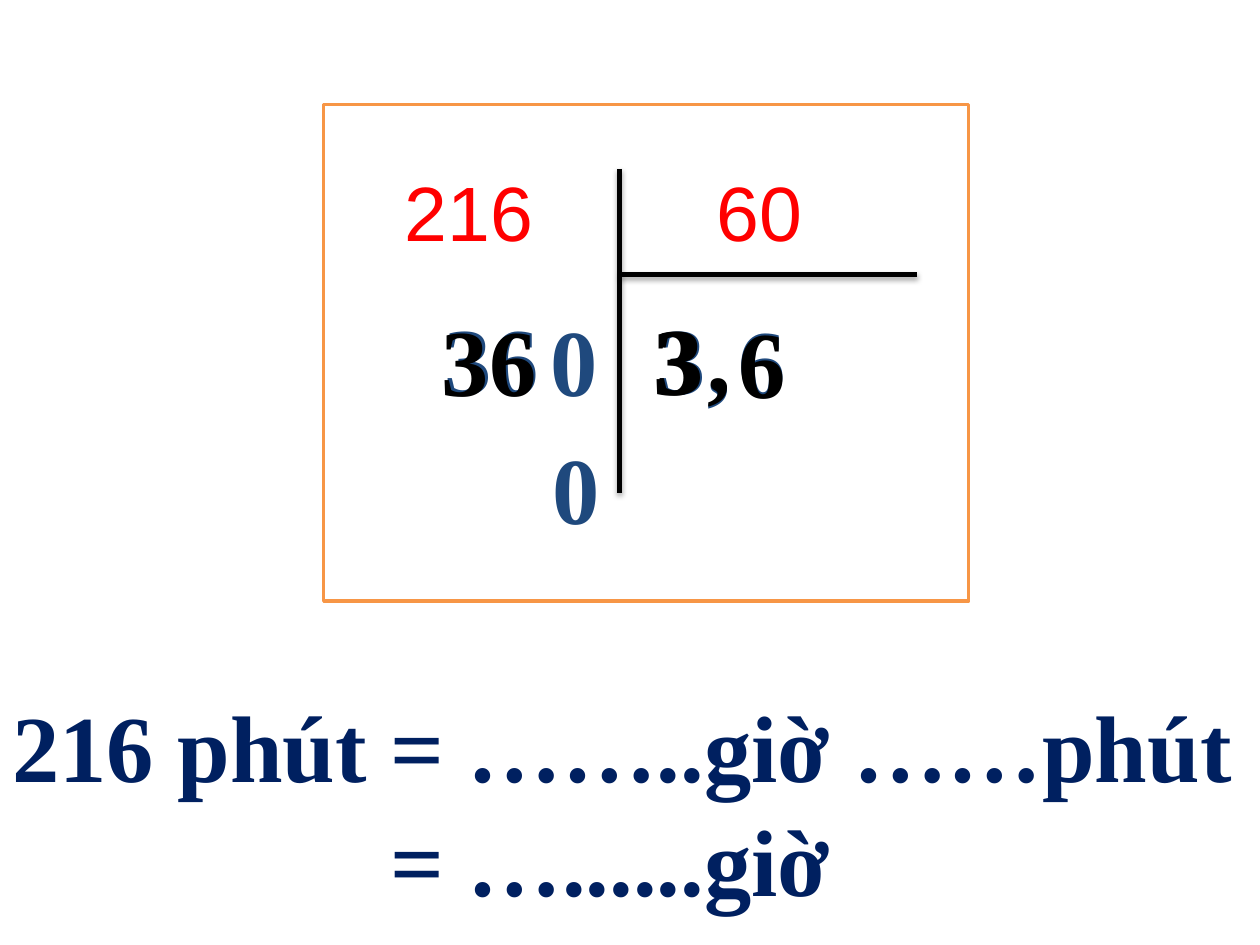
from dataclasses import dataclass

from lxml.etree import SubElement
from pptx import Presentation
from pptx.dml.color import RGBColor
from pptx.enum.shapes import MSO_CONNECTOR, MSO_SHAPE
from pptx.enum.text import MSO_ANCHOR, MSO_AUTO_SIZE, PP_ALIGN
from pptx.oxml.ns import qn
from pptx.slide import Slide
from pptx.util import Pt


@dataclass(frozen=True)
class Theme:
    sans: str = "Arial"
    serif: str = "Times New Roman"
    red: str = "FF0000"
    blue: str = "1F497D"
    navy: str = "002060"
    black: str = "000000"
    white: str = "FFFFFF"
    orange: str = "F79646"
    mid: float = 44
    big: float = 54


THEME = Theme()


@dataclass(frozen=True)
class Label:
    text: str
    left: float
    top: float
    width: float
    color: str
    height: float = 72.7
    wrap: bool = True
    font: str = THEME.serif
    size: float = THEME.big
    bold: bool = True
    indents: tuple[float, ...] = (0,)
    anchor: MSO_ANCHOR = MSO_ANCHOR.TOP
    fit: MSO_AUTO_SIZE = MSO_AUTO_SIZE.SHAPE_TO_FIT_TEXT


def given(text: str, left: float, indent: float = 0) -> Label:
    """A number of the division as it is first set."""
    return Label(text, left, 90.7, 193, THEME.red, 60.5, font=THEME.sans,
                 size=THEME.mid, bold=False, indents=(indent,))


def faint(text: str, left: float, top: float, width: float = 41.8) -> Label:
    return Label(text, left, top, width, THEME.blue, wrap=False)


def dark(text: str, left: float, top: float, width: float) -> Label:
    return Label(text, left, top, width, THEME.black)


TITLE = Label("216 phút = ……..giờ ……phút\n= …......giờ", 0, 406, 714.2,
              THEME.navy, 104.4, indents=(0, 216),
              anchor=MSO_ANCHOR.MIDDLE, fit=MSO_AUTO_SIZE.NONE)

DIGITS = (
    faint("3", 369.4, 167.8),
    faint("36", 247, 167.8, 69),
    faint(",", 397.4, 167.8, 28),
    faint("6", 414.7, 169.2),
    faint("0", 308.9, 242),
    faint("0", 307.4, 169.2),
    dark("36", 245.5, 169.2, 160),
    dark("3", 368, 167.8, 60),
    dark("3", 366.5, 168.5, 154),
    dark("6", 414.7, 170, 77),
    dark(",", 397.4, 167, 46),
)


def add_label(slide: Slide, item: Label) -> None:
    box = slide.shapes.add_textbox(Pt(item.left), Pt(item.top),
                                   Pt(item.width), Pt(item.height))
    frame = box.text_frame
    frame.text = item.text
    frame.word_wrap = item.wrap
    frame.auto_size = item.fit
    frame.vertical_anchor = item.anchor
    for para, indent in zip(frame.paragraphs, item.indents):
        para.alignment = PP_ALIGN.LEFT
        if indent:
            para._p.get_or_add_pPr().set("marL", str(Pt(indent)))
        for run in para.runs:
            font = run.font
            font.name = item.font
            font.size = Pt(item.size)
            font.bold = item.bold
            font.color.rgb = RGBColor.from_string(item.color)


def add_frame(slide: Slide) -> None:
    box = slide.shapes.add_shape(MSO_SHAPE.RECTANGLE, Pt(185), Pt(59.8),
                                 Pt(368.6), Pt(283.7))
    box.shadow.inherit = False
    box.fill.solid()
    box.fill.fore_color.rgb = RGBColor.from_string(THEME.white)
    box.line.color.rgb = RGBColor.from_string(THEME.orange)
    box.line.width = Pt(2)


def add_rule(slide: Slide, x1: float, y1: float, x2: float, y2: float) -> None:
    """Draw a black bar with a soft shadow below it."""
    rule = slide.shapes.add_connector(MSO_CONNECTOR.STRAIGHT,
                                      Pt(x1), Pt(y1), Pt(x2), Pt(y2))
    rule.line.color.rgb = RGBColor.from_string(THEME.black)
    rule.line.width = Pt(3)
    effects = SubElement(rule._element.spPr, qn("a:effectLst"))
    shadow = SubElement(effects, qn("a:outerShdw"), blurRad=str(Pt(3.1)),
                        dist=str(Pt(1.8)), dir="5400000", rotWithShape="0")
    color = SubElement(shadow, qn("a:srgbClr"), val=THEME.black)
    SubElement(color, qn("a:alpha"), val="35000")


def main() -> None:
    deck = Presentation()
    deck.slide_width, deck.slide_height = Pt(720), Pt(540)
    slide = deck.slides.add_slide(deck.slide_layouts[6])
    add_frame(slide)
    add_label(slide, given("216", 224))
    add_rule(slide, 354.2, 96.5, 354.2, 281.5)
    add_label(slide, TITLE)
    add_rule(slide, 354.2, 157, 524.2, 157)
    add_label(slide, given("60", 365.8, 36.7))
    for digit in DIGITS:
        add_label(slide, digit)
    deck.save("out.pptx")


if __name__ == "__main__":
    main()
